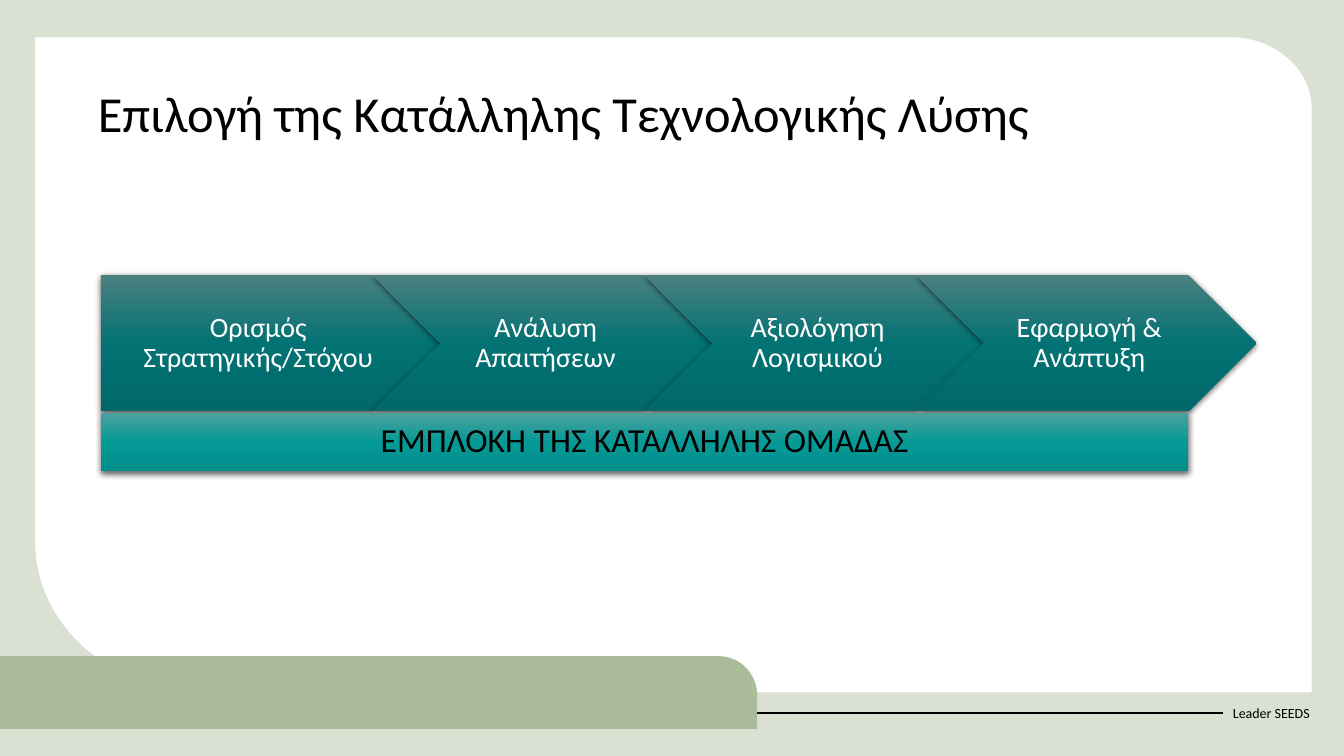
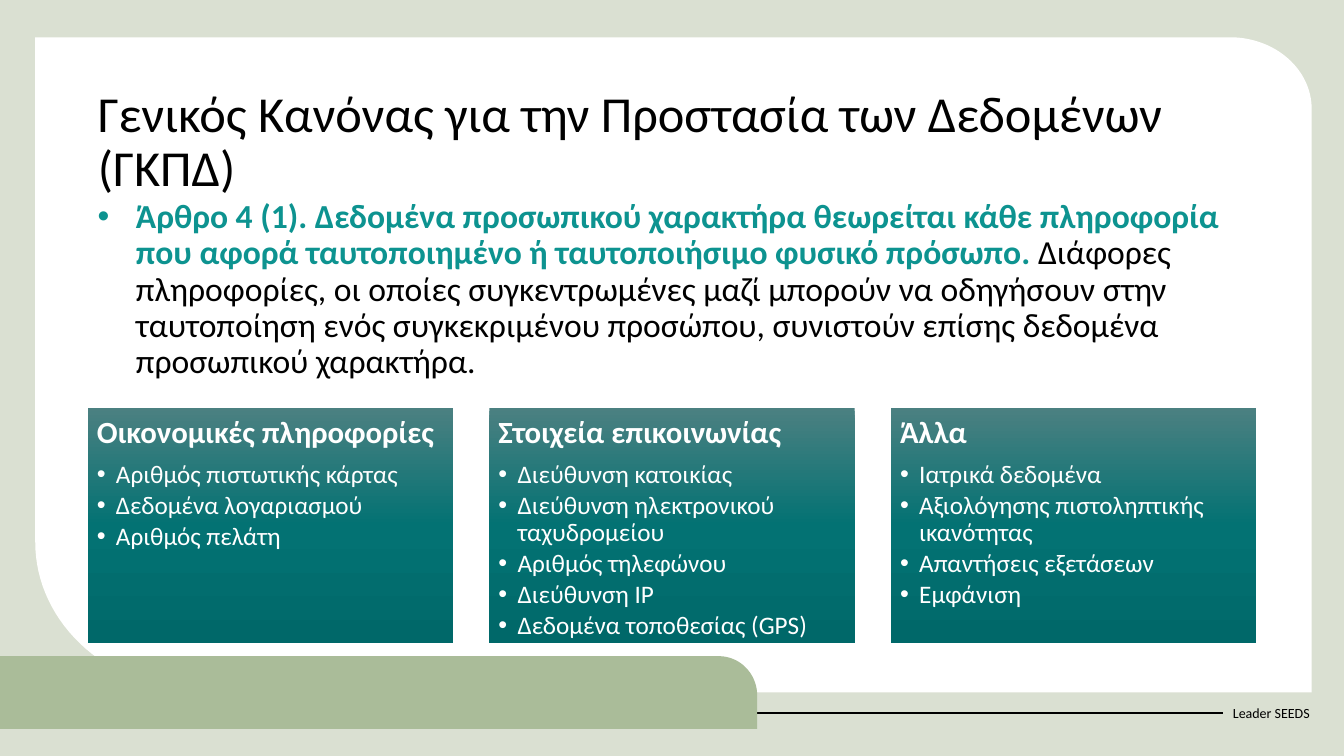
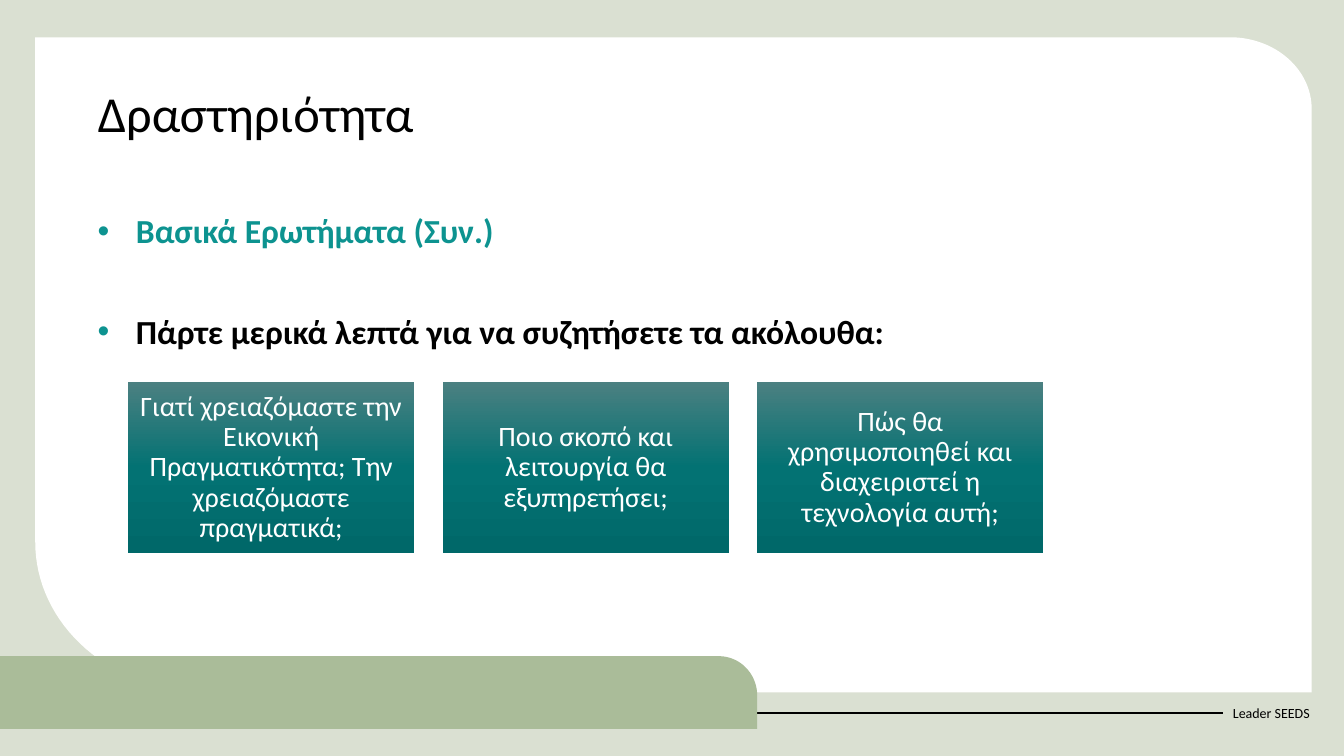
from dataclasses import dataclass
from math import cos, pi, sin

from pptx import Presentation
from pptx.dml.color import RGBColor
from pptx.enum.shapes import MSO_CONNECTOR, MSO_SHAPE
from pptx.enum.text import MSO_ANCHOR as Anchor, MSO_AUTO_SIZE, PP_ALIGN as Align
from pptx.oxml import parse_xml
from pptx.oxml.ns import nsdecls
from pptx.util import Inches, Pt


@dataclass(frozen=True)
class Theme:
    font: str = "Calibri"
    black: str = "000000"
    white: str = "FFFFFF"
    accent: str = "0D9390"
    backdrop: str = "DAE0D2"
    band: str = "AABC99"
    dark_teal: tuple = ("4B8081", "037273", "006869")
    light_teal: tuple = ("4BA19E", "069A96", "008E8B")
    title_size: float = 36
    body_size: float = 24
    heading_size: float = 22
    label_size: float = 20
    item_size: float = 18
    footer_size: float = 10
    line_spacing: float = 0.9


THEME = Theme()


@dataclass(frozen=True)
class Box:
    """A region in inches."""
    left: float
    top: float
    width: float
    height: float

    @property
    def right(self):
        return self.left + self.width

    @property
    def bottom(self):
        return self.top + self.height

    @property
    def emu(self):
        return [Inches(v) for v in (self.left, self.top, self.width, self.height)]

    def rows(self, top, height):
        """Full-width strip that starts at a given distance below the top."""
        return Box(self.left, self.top + top, self.width, height)

    def columns(self, count, gap):
        width = (self.width - gap * (count - 1)) / count
        return [Box(self.left + i * (width + gap), self.top, width, self.height)
                for i in range(count)]


PAGE = Box(0, 0, 13.33, 7.5)
CONTENT = Box(0.87, 0.83, 11.59, 5.55)
TITLE_BOX = CONTENT.rows(0, 0.88)


# ---- Text ----
def style_run(run, size, color, bold=False):
    run.font.name = THEME.font
    run.font.size = Pt(size)
    run.font.bold = bold
    run.font.color.rgb = RGBColor.from_string(color)


def add_text(paragraph, text, size, color, bold=False):
    run = paragraph.add_run()
    run.text = text
    style_run(run, size, color, bold)


def set_frame(frame, anchor=Anchor.TOP, insets=(0.1, 0.05, 0.1, 0.05)):
    frame.word_wrap = True
    frame.auto_size = MSO_AUTO_SIZE.NONE
    frame.vertical_anchor = anchor
    (frame.margin_left, frame.margin_top,
     frame.margin_right, frame.margin_bottom) = map(Inches, insets)


def next_paragraph(frame, align=Align.LEFT, before=0, after=0):
    """Use the empty first paragraph, then add further ones."""
    first = frame.paragraphs[0]
    paragraph = frame.add_paragraph() if first.runs else first
    paragraph.alignment = align
    paragraph.line_spacing = THEME.line_spacing
    paragraph.space_before = Pt(before)
    paragraph.space_after = Pt(after)
    return paragraph


def add_bullet(paragraph, indent, color):
    properties = paragraph._p.get_or_add_pPr()
    properties.set("marL", str(Inches(indent)))
    properties.set("indent", str(-Inches(indent)))
    for xml in (f'<a:buClr {nsdecls("a")}><a:srgbClr val="{color}"/></a:buClr>',
                f'<a:buFont {nsdecls("a")} typeface="Arial"/>',
                f'<a:buChar {nsdecls("a")} char="•"/>'):
        properties.append(parse_xml(xml))


# ---- Shapes ----
def add_gradient_shape(slide, kind, box, colors, shadow=False):
    shape = slide.shapes.add_shape(kind, *box.emu)
    stops = "".join(f'<a:gs pos="{i * 50000}"><a:srgbClr val="{color}"/></a:gs>'
                    for i, color in enumerate(colors))
    properties = shape.element.spPr
    properties.append(parse_xml(
        f'<a:gradFill {nsdecls("a")} rotWithShape="1"><a:gsLst>{stops}</a:gsLst>'
        '<a:lin ang="5400000" scaled="0"/></a:gradFill>'))
    shape.line.fill.background()
    shape.shadow.inherit = False
    if shadow:
        properties.xpath("a:effectLst")[0].append(parse_xml(
            f'<a:outerShdw {nsdecls("a")} blurRad="{Pt(4.5)}" dist="{Pt(1.5)}" '
            'dir="5400000" algn="ctr" rotWithShape="0">'
            f'<a:srgbClr val="{THEME.black}"><a:alpha val="63000"/></a:srgbClr>'
            '</a:outerShdw>'))
    return shape


def add_label(shape, text, size, color, insets):
    set_frame(shape.text_frame, Anchor.MIDDLE, insets)
    add_text(next_paragraph(shape.text_frame, Align.CENTER), text, size, color)


def arc(center_x, center_y, radius_x, radius_y, start, steps=32):
    """Points of a clockwise quarter ellipse, angles measured from the right."""
    angles = [start + pi / 2 * i / steps for i in range(steps + 1)]
    return [(center_x + radius_x * cos(a), center_y + radius_y * sin(a)) for a in angles]


def add_rounded_panel(slide, box, color, top_right, bottom_left=None):
    """Panel with its own elliptical radii at two opposite corners."""
    rx, ry = top_right
    points = [(box.left, box.top)]
    points += arc(box.right - rx, box.top + ry, rx, ry, -pi / 2)
    points.append((box.right, box.bottom))
    if bottom_left:
        rx, ry = bottom_left
        points += arc(box.left + rx, box.bottom - ry, rx, ry, pi / 2)
    else:
        points.append((box.left, box.bottom))
    start, *others = [(Inches(x), Inches(y)) for x, y in points]
    builder = slide.shapes.build_freeform(*start)
    builder.add_line_segments(others, close=True)
    panel = builder.convert_to_shape()
    panel.fill.solid()
    panel.fill.fore_color.rgb = RGBColor.from_string(color)
    panel.line.fill.background()
    panel.shadow.inherit = False


# ---- Shared frame ----
def move_frame_to_layout(slide, layout):
    """Draw the panel, footer and band once and keep them on the layout."""
    layout.background.fill.solid()
    layout.background.fill.fore_color.rgb = RGBColor.from_string(THEME.backdrop)
    add_rounded_panel(slide, Box(0.35, 0.37, 12.66, 6.5), THEME.white,
                      top_right=(0.81, 0.71), bottom_left=(1.7, 1.49))

    footer_box = Box(12.13, 6.87, 1.01, 0.4)
    footer = slide.shapes.add_textbox(*footer_box.emu).text_frame
    set_frame(footer, Anchor.MIDDLE)
    add_text(footer.paragraphs[0], "Leader SEEDS", THEME.footer_size, THEME.black)

    middle = Inches(footer_box.top + footer_box.height / 2)
    rule = slide.shapes.add_connector(MSO_CONNECTOR.STRAIGHT, 0, middle,
                                      Inches(footer_box.left), middle)
    rule.line.color.rgb = RGBColor.from_string(THEME.black)
    rule.line.width = Pt(1.5)
    rule.element.spPr.append(parse_xml(f'<a:effectLst {nsdecls("a")}/>'))
    add_rounded_panel(slide, Box(0, 6.51, 7.51, 0.72), THEME.band, top_right=(0.38, 0.39))

    frame_shapes = [shape for shape in slide.shapes if not shape.is_placeholder]
    for number, shape in enumerate(frame_shapes, start=101):
        shape.element.xpath(".//p:cNvPr")[0].set("id", str(number))
        layout.shapes.element.append(shape.element)


def set_title(slide, text):
    title = slide.shapes.title
    title.left, title.top, title.width, title.height = TITLE_BOX.emu
    set_frame(title.text_frame)
    add_text(next_paragraph(title.text_frame), text, THEME.title_size, THEME.black)


# ---- Regions ----
def add_body(slide, box, paragraphs, gap=0):
    """Bulleted text; each paragraph is a list of (text, color, bold)."""
    frame = slide.shapes.add_textbox(*box.emu).text_frame
    set_frame(frame)
    for index, pieces in enumerate(paragraphs):
        paragraph = next_paragraph(frame, before=gap if index else 0)
        add_bullet(paragraph, 0.38, THEME.accent)
        for text, color, bold in pieces:
            add_text(paragraph, text, THEME.body_size, color, bold)


def add_process(slide, box, steps, base_text):
    """Overlapping arrows above a bar that ends where the last point begins."""
    arrow_height, bar_height = 1.35, 0.57
    point = arrow_height / 2
    arrows = box.rows(0, arrow_height).columns(len(steps), -point)
    for index, (arrow, text) in enumerate(zip(arrows, steps)):
        kind = MSO_SHAPE.CHEVRON if index else MSO_SHAPE.PENTAGON
        shape = add_gradient_shape(slide, kind, arrow, THEME.dark_teal, shadow=True)
        left_inset = 0.09 if index else 0.12
        add_label(shape, text, THEME.label_size, THEME.white, (left_inset, 0.06, 0.03, 0.06))

    bar_box = Box(box.left, box.bottom - bar_height, box.width - point, bar_height)
    bar = add_gradient_shape(slide, MSO_SHAPE.RECTANGLE, bar_box, THEME.light_teal, shadow=True)
    add_label(bar, base_text, THEME.body_size, THEME.black, (0.1, 0.05, 0.1, 0.05))


def add_list_cards(slide, box, cards):
    for card_box, (heading, items) in zip(box.columns(len(cards), 0.36), cards):
        card = add_gradient_shape(slide, MSO_SHAPE.RECTANGLE, card_box, THEME.dark_teal)
        frame = card.text_frame
        set_frame(frame, insets=(0.09,) * 4)
        add_text(next_paragraph(frame, after=7.7), heading,
                 THEME.heading_size, THEME.white, True)
        for item in items:
            paragraph = next_paragraph(frame, after=2.7)
            add_bullet(paragraph, 0.19, THEME.white)
            add_text(paragraph, item, THEME.item_size, THEME.white)


def add_question_cards(slide, box, questions):
    for card_box, question in zip(box.columns(len(questions), 0.28), questions):
        card = add_gradient_shape(slide, MSO_SHAPE.RECTANGLE, card_box, THEME.dark_teal)
        add_label(card, question, THEME.label_size, THEME.white, (0.08,) * 4)


# ---- Slides ----
def build_solution_slide(slide):
    set_title(slide, "Επιλογή της Κατάλληλης Τεχνολογικής Λύσης")
    add_process(slide, Box(1, 2.73, 11.46, 1.94),
                ["Ορισμός Στρατηγικής/Στόχου", "Ανάλυση Απαιτήσεων",
                 "Αξιολόγηση Λογισμικού", "Εφαρμογή & Ανάπτυξη"],
                "ΕΜΠΛΟΚΗ ΤΗΣ ΚΑΤΑΛΛΗΛΗΣ ΟΜΑΔΑΣ")


def build_data_protection_slide(slide):
    set_title(slide, "Γενικός Κανόνας για την Προστασία των Δεδομένων (ΓΚΠΔ)")
    add_body(slide, CONTENT.rows(1.1, 2), [[
        ("Άρθρο 4 (1). Δεδομένα προσωπικού χαρακτήρα θεωρείται κάθε πληροφορία "
         "που αφορά ταυτοποιημένο ή ταυτοποιήσιμο φυσικό πρόσωπο. ", THEME.accent, True),
        ("Διάφορες πληροφορίες, οι οποίες συγκεντρωμένες μαζί μπορούν να οδηγήσουν "
         "στην ταυτοποίηση ενός συγκεκριμένου προσώπου, συνιστούν επίσης δεδομένα "
         "προσωπικού χαρακτήρα.", THEME.black, False)]])
    add_list_cards(slide, CONTENT.rows(3.22, 2.33), [
        ("Οικονομικές πληροφορίες",
         ["Αριθμός πιστωτικής κάρτας", "Δεδομένα λογαριασμού", "Αριθμός πελάτη"]),
        ("Στοιχεία επικοινωνίας",
         ["Διεύθυνση κατοικίας", "Διεύθυνση ηλεκτρονικού ταχυδρομείου",
          "Αριθμός τηλεφώνου", "Διεύθυνση IP", "Δεδομένα τοποθεσίας (GPS)"]),
        ("Άλλα",
         ["Ιατρικά δεδομένα", "Αξιολόγησης πιστοληπτικής ικανότητας",
          "Απαντήσεις εξετάσεων", "Εμφάνιση"])])


def build_activity_slide(slide):
    set_title(slide, "Δραστηριότητα")
    add_body(slide, CONTENT.rows(1.25, 1.6), [
        [("Βασικά Ερωτήματα (Συν.)", THEME.accent, True)],
        [("Πάρτε μερικά λεπτά για να συζητήσετε τα ακόλουθα:", THEME.black, True)]], gap=46)
    add_question_cards(slide, Box(1.27, 3.79, 9.08, 1.7), [
        "Γιατί χρειαζόμαστε την Εικονική Πραγματικότητα; Την χρειαζόμαστε πραγματικά;",
        "Ποιο σκοπό και λειτουργία θα εξυπηρετήσει;",
        "Πώς θα χρησιμοποιηθεί και διαχειριστεί η τεχνολογία αυτή;"])


def main():
    presentation = Presentation()
    presentation.slide_width = Inches(PAGE.width)
    presentation.slide_height = Inches(PAGE.height)
    layout = presentation.slide_layouts.get_by_name("Title Only")
    builders = (build_solution_slide, build_data_protection_slide, build_activity_slide)
    slides = [presentation.slides.add_slide(layout) for _ in builders]
    move_frame_to_layout(slides[0], layout)
    for build, slide in zip(builders, slides):
        build(slide)
    presentation.save("out.pptx")


if __name__ == "__main__":
    main()
